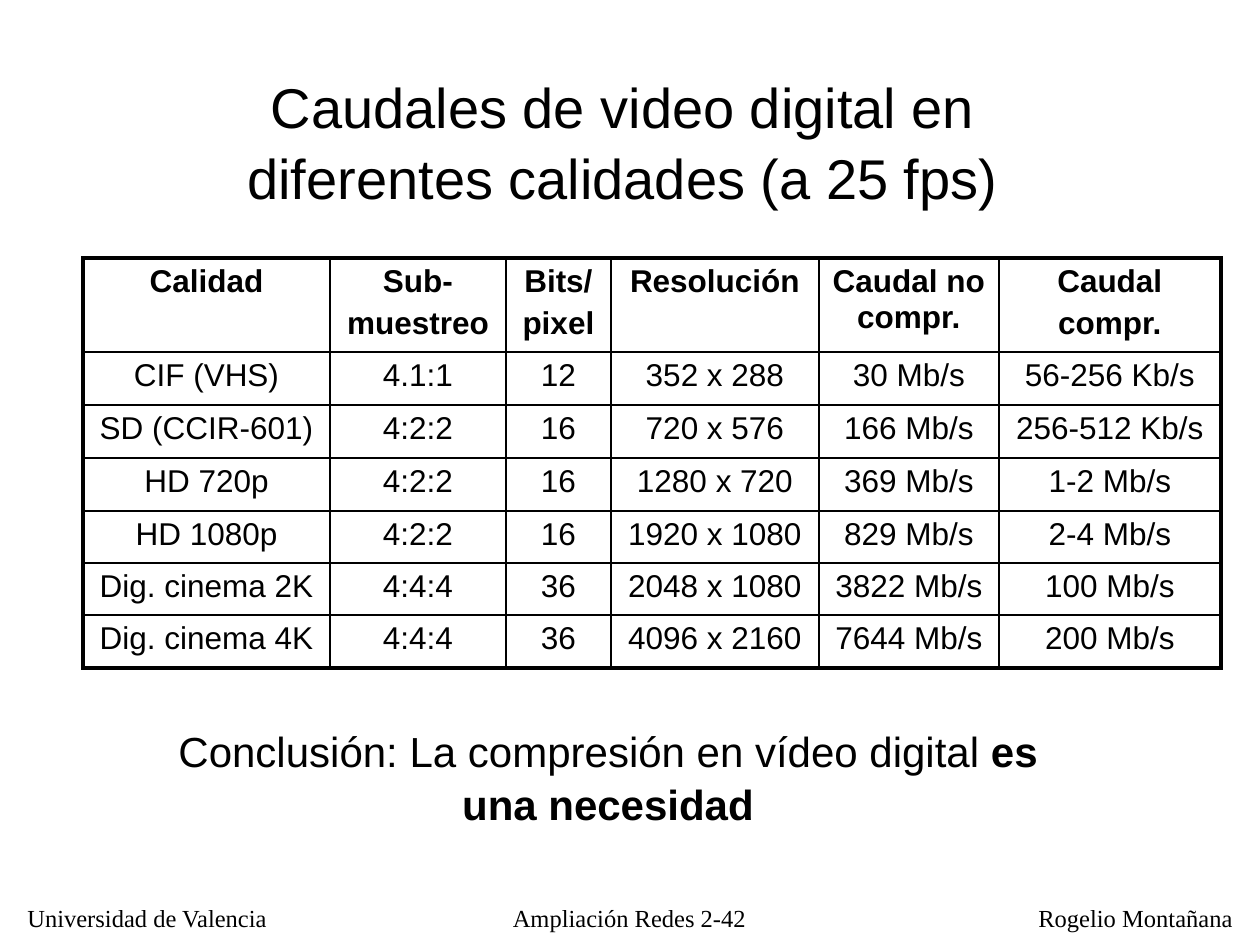
from lxml.etree import SubElement
from pptx import Presentation
from pptx.dml.color import RGBColor
from pptx.enum.text import MSO_ANCHOR as Anchor, MSO_AUTO_SIZE as AutoSize, PP_ALIGN as Align
from pptx.oxml.ns import qn
from pptx.util import Emu, Pt

PX = 914400 // 126
INK = "000000"
COLUMNS = [247, 176, 105, 208, 180, 222]
ROWS = [94, 53, 53, 53, 52, 52, 53]
RATES = [
    ["Calidad", "Sub-\nmuestreo", "Bits/\npixel", "Resolución", "Caudal no compr.", "Caudal\ncompr."],
    ["CIF (VHS)", "4.1:1", "12", "352 x 288", "30 Mb/s", "56-256 Kb/s"],
    ["SD (CCIR-601)", "4:2:2", "16", "720 x 576", "166 Mb/s", "256-512 Kb/s"],
    ["HD 720p", "4:2:2", "16", "1280 x 720", "369 Mb/s", "1-2 Mb/s"],
    ["HD 1080p", "4:2:2", "16", "1920 x 1080", "829 Mb/s", "2-4 Mb/s"],
    ["Dig. cinema 2K", "4:4:4", "36", "2048 x 1080", "3822 Mb/s", "100 Mb/s"],
    ["Dig. cinema 4K", "4:4:4", "36", "4096 x 2160", "7644 Mb/s", "200 Mb/s"],
]
FOOTERS = [
    ("Universidad de Valencia", (15, 897, 268, 42), False),
    ("Rogelio Montañana", (1026, 897, 219, 42), False),
    ("Ampliación Redes 2-42", (491, 897, 277, 39), True),
]


def px(count):
    """Turn whole pixels into EMU."""
    return Emu(count * PX)


def color(code):
    """Turn a hex string into a colour."""
    return RGBColor.from_string(code)


def apply(target, values):
    """Set each named attribute on the target."""
    for name, value in values.items():
        setattr(target, name, value)


def add_span(para, text, size, bold=False, font="Arial"):
    """Add one formatted run to a paragraph."""
    span = para.add_run()
    span.text = text
    apply(span.font, {"size": Pt(size), "bold": bold, "name": font})
    span.font.color.rgb = color(INK)


def place(box, area, wrap=True):
    """Position a text shape and set up its frame."""
    apply(box, dict(zip(("left", "top", "width", "height"), map(px, area))))
    apply(box.text_frame, {"word_wrap": wrap, "auto_size": AutoSize.NONE,
                           "vertical_anchor": Anchor.TOP})
    return box.text_frame.paragraphs[0]


def add_box(page, area, wrap=True):
    """Add a text box and return its first paragraph."""
    return place(page.shapes.add_textbox(0, 0, 0, 0), area, wrap)


def set_title(page):
    """Fill the title placeholder."""
    para = place(page.shapes.title, (203, 62, 840, 149))
    apply(para, {"alignment": Align.CENTER, "line_spacing": 1.06})
    add_span(para, "Caudales de video digital en diferentes calidades (a 25 fps)", 32)


def set_borders(cell, row, column):
    """Draw thick lines on the table's rim and thin ones inside it."""
    rims = {"lnL": column == 0, "lnR": column == len(COLUMNS) - 1,
            "lnT": row == 0, "lnB": row == len(ROWS) - 1}
    properties = cell._tc.get_or_add_tcPr()
    for tag, rim in rims.items():
        line = SubElement(properties, qn(f"a:{tag}"), w=str(Pt(2.25 if rim else 1)))
        fill = SubElement(line, qn("a:solidFill"))
        SubElement(fill, qn("a:srgbClr"), val=INK)


def fill_cell(cell, text, bold):
    """Write each line of the text as a centred paragraph."""
    frame = cell.text_frame
    for index, line in enumerate(text.split("\n")):
        para = frame.add_paragraph() if index else frame.paragraphs[0]
        apply(para, {"alignment": Align.CENTER, "space_before": Pt(3.6)})
        add_span(para, line, 18, bold)


def add_rates(page):
    """Add the table of video rates."""
    table = page.shapes.add_table(len(ROWS), len(COLUMNS), px(83), px(258),
                                  px(sum(COLUMNS)), px(sum(ROWS))).table
    apply(table, {"first_row": False, "horz_banding": False})
    for column, width in zip(table.columns, COLUMNS):
        column.width = px(width)
    for row, height in zip(table.rows, ROWS):
        row.height = px(height)
    for row, texts in enumerate(RATES):
        for column, text in enumerate(texts):
            cell = table.cell(row, column)
            set_borders(cell, row, column)
            cell.fill.background()
            fill_cell(cell, text, row == 0)


def add_conclusion(page):
    """Add the closing statement."""
    para = add_box(page, (149, 716, 918, 115))
    apply(para, {"alignment": Align.CENTER, "line_spacing": 1.06})
    add_span(para, "Conclusión: La compresión en vídeo digital ", 24)
    add_span(para, "es una necesidad", 24, True)


def add_footers(page):
    """Add the three footer texts."""
    for text, area, centred in FOOTERS:
        para = add_box(page, area, centred)
        para.alignment = Align.CENTER if centred else Align.LEFT
        add_span(para, text, 14, font="Times New Roman")


def main():
    """Build and save the slide."""
    deck = Presentation()
    apply(deck, {"slide_width": px(1260), "slide_height": px(945)})
    page = deck.slides.add_slide(deck.slide_layouts[5])
    add_footers(page)
    set_title(page)
    add_rates(page)
    add_conclusion(page)
    deck.save("out.pptx")


if __name__ == "__main__":
    main()
